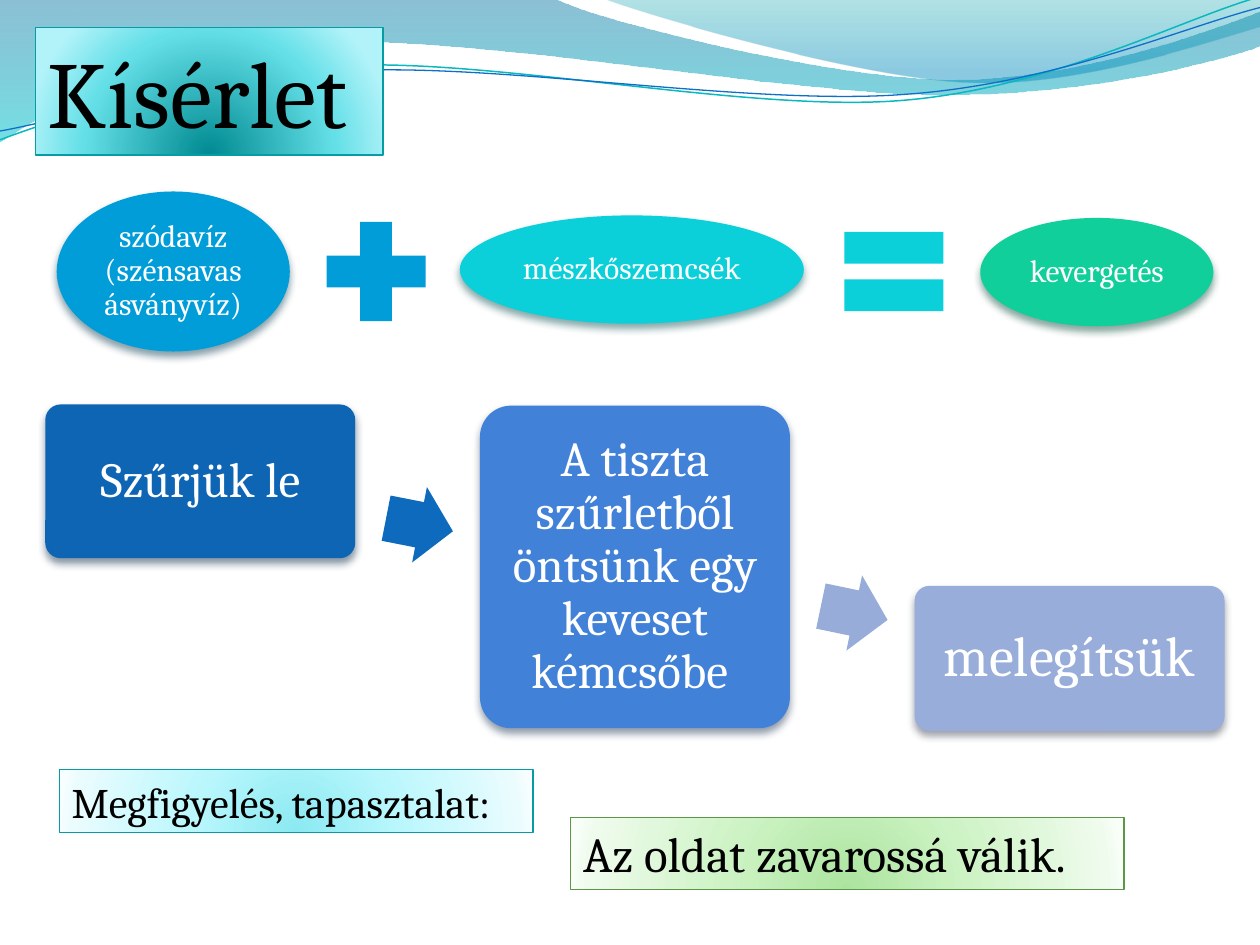
from lxml import etree
from pptx import Presentation
from pptx.dml.color import RGBColor
from pptx.enum.shapes import MSO_SHAPE
from pptx.enum.text import MSO_ANCHOR, PP_ALIGN
from pptx.oxml import parse_xml
from pptx.oxml.ns import nsdecls, qn
from pptx.util import Inches, Pt

RECT, ROUND, OVAL = MSO_SHAPE.RECTANGLE, MSO_SHAPE.ROUNDED_RECTANGLE, MSO_SHAPE.OVAL
PLUS, EQUAL, ARROW = MSO_SHAPE.MATH_PLUS, MSO_SHAPE.MATH_EQUAL, MSO_SHAPE.RIGHT_ARROW
LEFT, MID = PP_ALIGN.LEFT, PP_ALIGN.CENTER
TOP, CENTER = MSO_ANCHOR.TOP, MSO_ANCHOR.MIDDLE
FONT = "Cambria"

BANDS = [
    ([(0, 0), [(4.4, -0.01)], [(4.76, 0.17), (6.64, 0.63), (7.58, 0.63)],
      [(8.53, 0.63), (9.58, 0.26), (10, 0.09)], [(10.01, 0.36)],
      [(9.83, 0.44), (8.7, 0.76), (7.46, 0.75)], [(6.22, 0.75), (3.82, 0.28), (2.57, 0.34)],
      [(1.29, 0.36), (0.46, 0.83), (-0.01, 1.13)]],
     [(0, "0074A1", 45), (100, "00C6CF", 55)]),
    ([(4.79, -0.01), [(5.09, 0.11), (6.82, 0.62), (7.69, 0.65)],
      [(8.56, 0.69), (9.61, 0.32), (10, 0.21)], [(10, 0)]],
     [(0, "00A1A9", 30), (80, "008BBF", 45)]),
]
WAVES = [
    ([(0, 1.11), [(0.48, 0.93), (1.58, 0.57), (2.77, 0.52)],
      [(3.95, 0.47), (5.93, 0.89), (7.13, 0.8)], [(8.33, 0.71), (9.38, 0.15), (9.98, -0.02)]],
     "0AB8BF", 0.85),
    ([(0, 1.04), [(0.47, 0.96), (1.64, 0.61), (2.83, 0.56)],
      [(4.03, 0.51), (5.97, 0.84), (7.17, 0.75)], [(8.36, 0.67), (9.41, 0.21), (10, 0.06)]],
     "0F6FC6", 0.75),
]
LABELS = [
    ("Kísérlet", 54, (0.28, 0.22, 2.76, 1.01), "069CA3",
     [(0, "008A91"), (68, "64DFE7"), (100, "B1F3F9")]),
    ("Az oldat zavarossá válik.", 28, (4.53, 6.49, 4.39, 0.57), "5B9747",
     [(0, "ACE49F"), (43, "CDF3C4"), (93, "EFFBED"), (100, "F9FFF8")]),
    ("Megfigyelés, tapasztalat:", 24, (0.47, 6.11, 3.76, 0.5), "069CA3",
     [(0, "8BE9F1"), (43, "B9F7FD"), (93, "EAFCFE"), (100, "F8FEFF")]),
]
STEPS = [
    ("Szűrjük le", 28, 3.21, 1.22, "0E65B4", "032341"),
    ("A tiszta szűrletből öntsünk egy keveset kémcsőbe ", 28, 3.22, 2.56, "4181D8", "152D4D"),
    ("melegítsük", 32, 4.65, 1.15, "98ADD9", "353D4D"),
]
ARROWS = [(3.86, 11.1, "0E6ABD"), (4.56, 11.8, "97ACD9")]
SUM = [
    (OVAL, "szódavíz (szénsavas ásványvíz)", (0.45, 1.52, 1.85, 1.27), "009DD9", "00374C"),
    (PLUS, "", (2.45, 1.62, 1.07, 1.07), "009DD9", None),
    (OVAL, "mészkőszemcsék", (3.65, 1.71, 2.73, 0.86), "0BD0D9", "024B4E"),
    (EQUAL, "", (6.56, 1.62, 1.07, 1.07), "0BD0D9", None),
    (OVAL, "kevergetés", (7.78, 1.73, 1.85, 0.86), "10CF9B", "044A37"),
]
COL, PITCH, BOX = 0.36, 3.45, 2.46


def rgb(code):
    return RGBColor.from_string(code)


def blend(shape, stops, mode):
    shape.fill.background()
    grad = parse_xml(f'<a:gradFill {nsdecls("a")} rotWithShape="1"><a:gsLst/>{mode}</a:gradFill>')
    for pos, code, *alpha in stops:
        stop = etree.SubElement(grad[0], qn("a:gs"), pos=str(pos * 1000))
        tint = etree.SubElement(stop, qn("a:srgbClr"), val=code)
        for part in alpha:
            etree.SubElement(tint, qn("a:alpha"), val=str(part * 1000))
    props = shape._element.spPr
    props.replace(props.find(qn("a:noFill")), grad)


def shade(shape, code):
    effect = shape._element.spPr.find(qn("a:effectLst"))
    effect.append(parse_xml(
        f'<a:outerShdw {nsdecls("a")} blurRad="{Pt(4.5)}" dist="{Pt(3)}" dir="5400000" '
        f'rotWithShape="0"><a:srgbClr val="{code}"><a:alpha val="48000"/></a:srgbClr></a:outerShdw>'))


def plain(shape, fill=None, shadow=None):
    shape.shadow.inherit = False
    shape.line.fill.background()
    if fill:
        shape.fill.solid()
        shape.fill.fore_color.rgb = rgb(fill)
    if shadow:
        shade(shape, shadow)
    return shape


def stroke(shape, code, width):
    shape.line.color.rgb = rgb(code)
    shape.line.width = Pt(width)


def draw(kind, area, fill=None, shadow=None):
    return plain(slide.shapes.add_shape(kind, *map(Inches, area)), fill, shadow)


def write(shape, text, size, code="FFFFFF", align=MID, anchor=CENTER, space=0.9, inset=(0.03, 0.03)):
    frame = shape.text_frame
    side, cap = map(Inches, inset)
    look = dict(word_wrap=True, vertical_anchor=anchor, margin_left=side,
                margin_right=side, margin_top=cap, margin_bottom=cap)
    para = frame.paragraphs[0]
    run = para.add_run()
    run.text = text
    run.font.color.rgb = rgb(code)
    for item, values in ((frame, look), (para, dict(alignment=align, line_spacing=space)),
                         (run.font, dict(name=FONT, size=Pt(size)))):
        for key, value in values.items():
            setattr(item, key, value)


def curve(route, close):
    start, *parts = route
    spots = [(Inches(x), Inches(y)) for part in parts for x, y in part]
    pen = slide.shapes.build_freeform(*map(Inches, start), scale=1.0)
    pen.add_line_segments(spots, close=close)
    shape = pen.convert_to_shape()
    lines = iter(list(shape._element.iter(qn("a:lnTo"))))
    for part in parts:
        first, *rest = [next(lines) for spot in part]
        if rest:
            first.tag = qn("a:cubicBezTo")
        for line in rest:
            first.append(line[0])
            line.getparent().remove(line)
    return plain(shape)


deck = Presentation()
deck.slide_width, deck.slide_height = Inches(10), Inches(7.5)
slide = deck.slides.add_slide(deck.slide_layouts[6])

for route, stops in BANDS:
    blend(curve(route, True), stops, '<a:lin ang="5400000" scaled="0"/>')
for route, code, width in WAVES:
    wave = curve(route, False)
    wave.fill.background()
    stroke(wave, code, width)

for text, size, area, edge, stops in LABELS:
    label = draw(RECT, area)
    blend(label, stops, '<a:path path="circle"><a:fillToRect l="50000" t="130000" '
                        'r="50000" b="-30000"/></a:path>')
    stroke(label, edge, 0.75)
    write(label, text, size, "000000", LEFT, TOP, 1.0, (0.1, 0.05))

for n, (text, size, top, height, fill, shadow) in enumerate(STEPS):
    step = draw(ROUND, (COL + n * PITCH, top, BOX, height), fill, shadow)
    step.adjustments[0] = 0.1
    write(step, text, size, inset=(0.12, 0.12))
for n, (top, turn, fill) in enumerate(ARROWS):
    arrow = draw(ARROW, (COL + BOX + 0.24 + n * PITCH, top, 0.54, 0.61), fill)
    arrow.adjustments[0] = 0.6
    arrow.rotation = turn

for kind, text, area, fill, shadow in SUM:
    part = draw(kind, area, fill, shadow)
    if text:
        write(part, text, 18)

deck.save("out.pptx")
